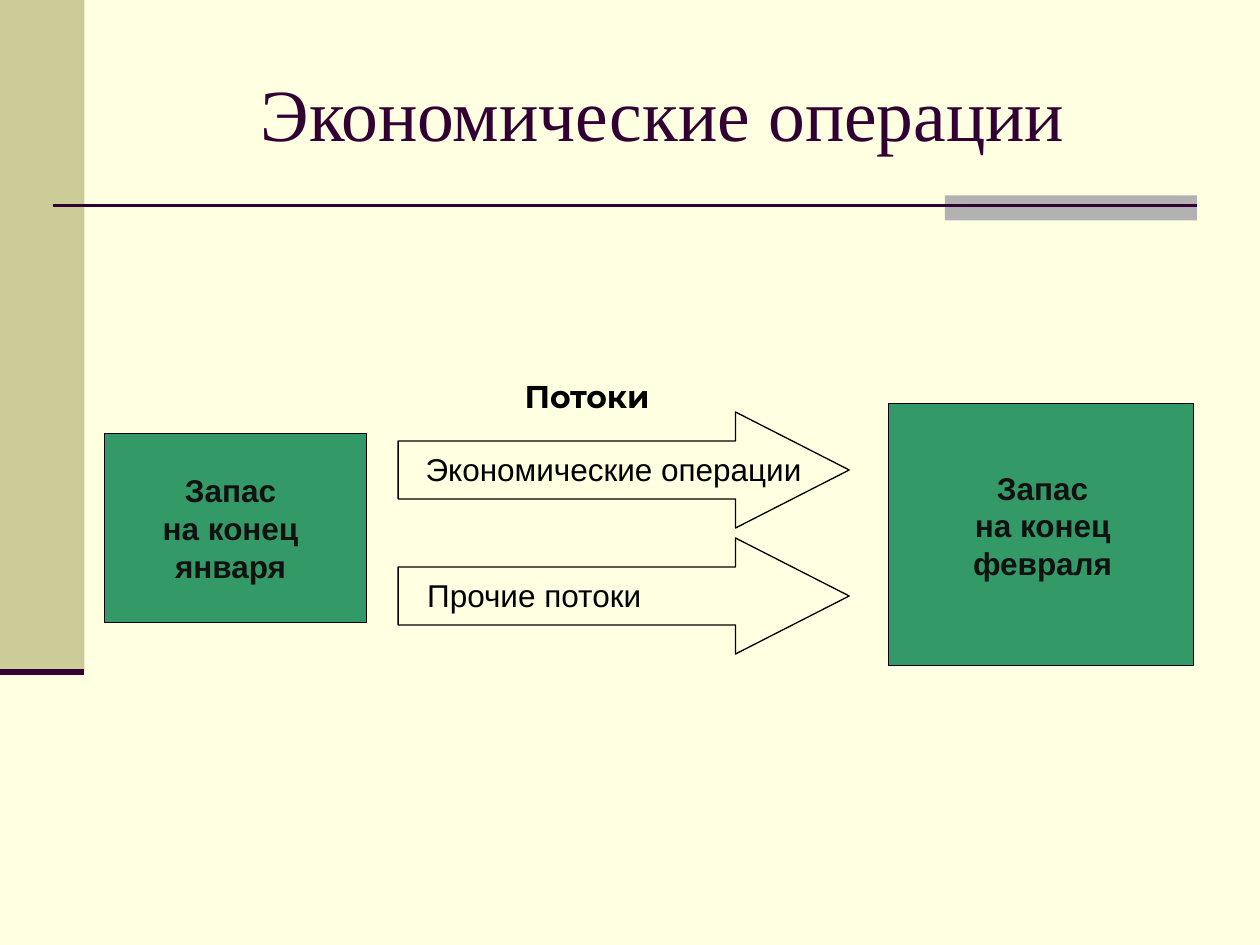
import pptx
import pptx.util
import pptx.dml.color
import pptx.enum.shapes
import pptx.enum.text
import pptx.oxml.ns
import lxml.etree

Inches = pptx.util.Inches
SHAPE = pptx.enum.shapes.MSO_SHAPE
PLUM = "330033"
GREEN = "339966"
BLACK = "000000"
INK = "111111"


def color(code):
    return pptx.dml.color.RGBColor.from_string(code)


def place(box):
    return [Inches(n) for n in box]


def add_form(slide, kind, box, fill=None, line=None):
    form = slide.shapes.add_shape(kind, *place(box))
    form.shadow.inherit = False
    if fill:
        form.fill.solid()
        form.fill.fore_color.rgb = color(fill)
    else:
        form.fill.background()
    if line:
        form.line.color.rgb = color(line)
        form.line.width = pptx.util.Pt(0.75)
    else:
        form.line.fill.background()
    return form


def add_rule(slide, left, right, top, width):
    ends = place((left, top, right, top))
    rule = slide.shapes.add_connector(pptx.enum.shapes.MSO_CONNECTOR.STRAIGHT, *ends)
    rule.line.color.rgb = color(PLUM)
    rule.line.width = pptx.util.Pt(width)
    props = rule._element.spPr
    lxml.etree.SubElement(props, pptx.oxml.ns.qn("a:effectLst"))


def write(frame, lines, size, face, ink, bold=False):
    """Fill one centred paragraph, with a line break between the lines."""
    frame.word_wrap = True
    para = frame.paragraphs[0]
    para.alignment = pptx.enum.text.PP_ALIGN.CENTER
    for pos, line in enumerate(lines):
        if pos:
            para.add_line_break()
        run = para.add_run()
        run.text = line
        run.font.size = pptx.util.Pt(size)
        run.font.name = face
        run.font.bold = bold
        run.font.color.rgb = color(ink)


def add_label(slide, box, lines, face="Arial", ink=BLACK, bold=False):
    label = slide.shapes.add_textbox(*place(box))
    write(label.text_frame, lines, 18, face, ink, bold)


def add_arrow(slide, top):
    arrow = add_form(slide, SHAPE.RIGHT_ARROW, (3.16, top, 3.58, 0.92), line=BLACK)
    arrow.adjustments[1] = 0.98


def add_stock(slide, box, text_box, month):
    add_form(slide, SHAPE.RECTANGLE, box, GREEN, BLACK)
    add_label(slide, text_box, ["Запас", "на конец " + month], ink=INK, bold=True)


def add_title(slide):
    title = slide.shapes.title
    title.left, title.top, title.width, title.height = place((1.15, 0.35, 8.22, 1.08))
    title.text_frame.vertical_anchor = pptx.enum.text.MSO_ANCHOR.MIDDLE
    write(title.text_frame, ["Экономические операции"], 42, "Times New Roman", PLUM)


def add_decor(slide):
    add_form(slide, SHAPE.RECTANGLE, (0, 0, 0.67, 5.33), "CCCC99")
    add_form(slide, SHAPE.RECTANGLE, (7.5, 1.55, 2, 0.2), "B2B2B2")
    add_rule(slide, 0.42, 9.5, 1.63, 1.5)
    add_rule(slide, 0, 0.67, 5.33, 3.5)


def main():
    deck = pptx.Presentation()
    deck.slide_width, deck.slide_height = place((10, 7.5))
    slide = deck.slides.add_slide(deck.slide_layouts[5])
    slide.background.fill.solid()
    slide.background.fill.fore_color.rgb = color("FFFFE1")

    add_decor(slide)
    add_title(slide)
    for top in (3.27, 4.27):
        add_arrow(slide, top)
    add_label(slide, (3.91, 2.94, 1.5, 0.4), ["Потоки"], "Montserrat", bold=True)
    add_label(slide, (3.16, 3.52, 3.42, 0.4), ["Экономические операции"])
    add_label(slide, (3.24, 4.52, 2, 0.4), ["Прочие потоки"])
    add_stock(slide, (0.83, 3.44, 2.08, 1.5), (1.08, 3.69, 1.5, 1), "января")
    add_stock(slide, (7.05, 3.2, 2.42, 2.08), (7.44, 3.67, 1.67, 1), "февраля")
    deck.save("out.pptx")


if __name__ == "__main__":
    main()
